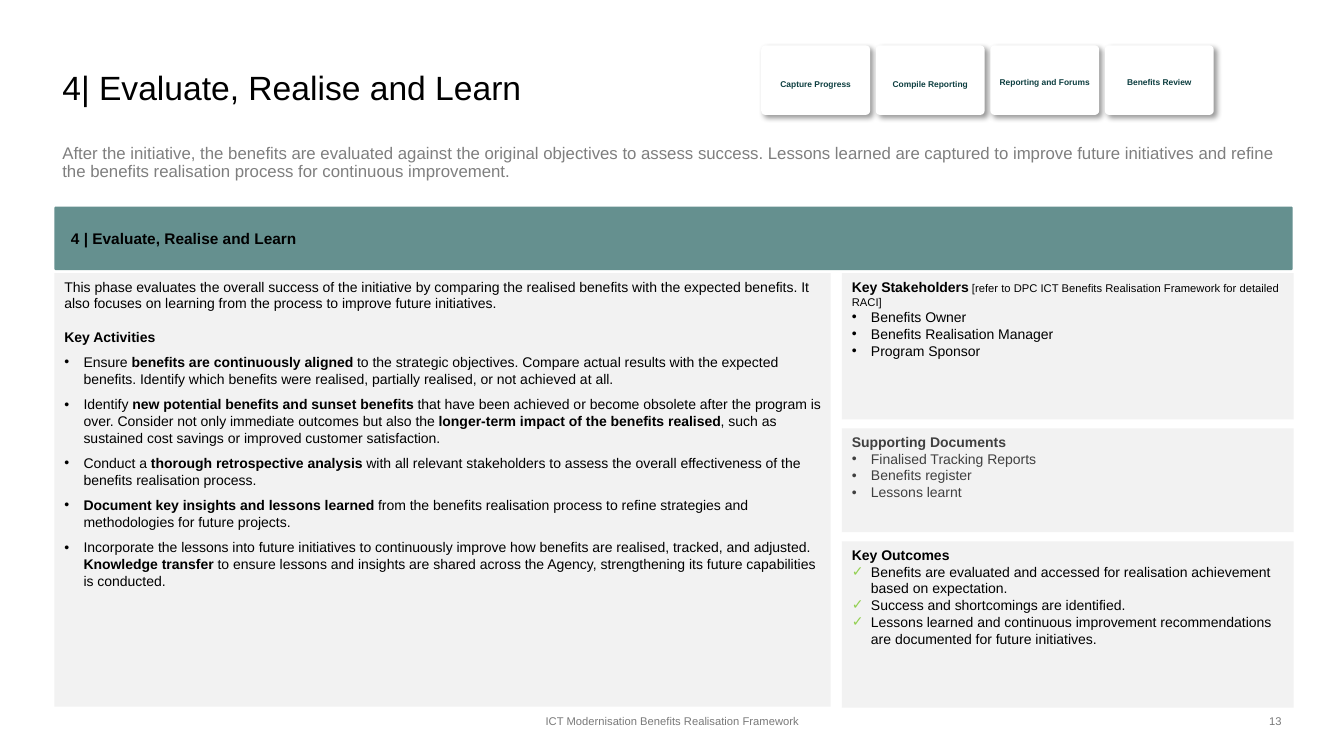
"""Build the Evaluate, Realise and Learn phase slide."""
from dataclasses import dataclass

from lxml import etree
from pptx import Presentation
from pptx.dml.color import RGBColor
from pptx.enum.shapes import MSO_SHAPE
from pptx.enum.text import MSO_ANCHOR, PP_ALIGN
from pptx.oxml.ns import qn
from pptx.util import Inches, Pt

RECT, ROUNDED = MSO_SHAPE.RECTANGLE, MSO_SHAPE.ROUNDED_RECTANGLE
TOP, MIDDLE = MSO_ANCHOR.TOP, MSO_ANCHOR.MIDDLE
LEFT, CENTER, RIGHT = PP_ALIGN.LEFT, PP_ALIGN.CENTER, PP_ALIGN.RIGHT


@dataclass(frozen=True)
class Theme:
    font: str = "Arial"
    black: str = "000000"
    white: str = "FFFFFF"
    lead: str = "7F7F7F"
    footer: str = "797979"
    step: str = "0D3E40"
    banner: str = "65908F"
    panel: str = "F2F2F2"
    muted: str = "404040"
    tick: str = "92D050"
    title_size: int = 24
    lead_size: int = 12
    banner_size: int = 11
    body_size: int = 10
    small_size: int = 8
    step_size: int = 6


theme = Theme()


def write(box, text, size=theme.body_size, color=theme.black, align=LEFT, bullet=None,
          bullet_color=None, before=0, spacing=None, note=None):
    """Append a paragraph in which ** switches bold on and off, with an optional small note."""
    frame = box.text_frame
    paragraph = frame.add_paragraph() if frame.text else frame.paragraphs[0]
    paragraph.alignment = align
    paragraph.space_before = Pt(before)
    if spacing:
        paragraph.line_spacing = spacing
    if bullet:
        properties = paragraph._p.get_or_add_pPr()
        properties.set("marL", str(Inches(0.19)))
        properties.set("indent", str(Inches(-0.19)))
        if bullet_color:
            tint = etree.SubElement(properties, qn("a:buClr"))
            etree.SubElement(tint, qn("a:srgbClr"), val=bullet_color)
        etree.SubElement(properties, qn("a:buFont"), typeface=theme.font)
        etree.SubElement(properties, qn("a:buChar"), char=bullet)
    pieces = [(part, index % 2 == 1, size) for index, part in enumerate(text.split("**"))]
    if note:
        pieces.append((note, False, theme.small_size))
    for part, bold, points in pieces:
        if part:
            run = paragraph.add_run()
            run.text = part
            run.font.name = theme.font
            run.font.size = Pt(points)
            run.font.bold = bold
            run.font.color.rgb = RGBColor.from_string(color)


def add_box(left, top, width, height, kind=None, fill=None, anchor=TOP):
    """Add a filled shape, or a plain text box when no kind is given."""
    place = [Inches(value) for value in (left, top, width, height)]
    if kind is None:
        box = slide.shapes.add_textbox(*place)
    else:
        box = slide.shapes.add_shape(kind, *place)
        box.shadow.inherit = False
        box.fill.solid()
        box.fill.fore_color.rgb = RGBColor.from_string(fill)
        box.line.fill.background()
    box.text_frame.word_wrap = True
    box.text_frame.vertical_anchor = anchor
    return box


deck = Presentation()
deck.slide_width, deck.slide_height = Inches(13.33), Inches(7.5)
slide = deck.slides.add_slide(deck.slide_layouts[6])

title = add_box(0.52, 0.48, 12.28, 0.82, anchor=MIDDLE)
write(title, "4| Evaluate, Realise and Learn", size=theme.title_size, spacing=0.9)

steps = [("Capture Progress", 0.05), ("Compile Reporting", 0.05),
         ("Reporting and Forums", 0.08), ("Benefits Review", 0.08)]
for index, (step, bottom_inset) in enumerate(steps):
    card = add_box(7.55 + index * 1.136, 0.45, 1.08, 0.69, ROUNDED, theme.white, MIDDLE)
    card.adjustments[0] = 0.06
    card.text_frame.margin_left = card.text_frame.margin_right = 0
    card.text_frame.margin_top = Inches(0.12)
    card.text_frame.margin_bottom = Inches(bottom_inset)
    effects = card._element.spPr.find(qn("a:effectLst"))
    shadow = etree.SubElement(effects, qn("a:outerShdw"), blurRad=str(Pt(4)), dist=str(Pt(3)),
                              dir="2700000", algn="tl", rotWithShape="0")
    shade = etree.SubElement(shadow, qn("a:srgbClr"), val=theme.black)
    etree.SubElement(shade, qn("a:alpha"), val="40000")
    write(card, f"**{step}**", size=theme.step_size, color=theme.step, align=CENTER)

lead = add_box(0.52, 1.39, 12.28, 0.58)
write(lead, "After the initiative, the benefits are evaluated against the original objectives to "
      "assess success. Lessons learned are captured to improve future initiatives and refine the "
      "benefits realisation process for continuous improvement.",
      size=theme.lead_size, color=theme.lead, spacing=0.9)

banner = add_box(0.54, 2.05, 12.28, 0.63, ROUNDED, theme.banner, MIDDLE)
banner.adjustments[0] = 0.02
banner.text_frame.margin_left = Inches(0.16)
write(banner, "**4 | Evaluate, Realise and Learn**", size=theme.banner_size)

phase = add_box(0.54, 2.71, 7.7, 4.3, RECT, theme.panel)
write(phase, "This phase evaluates the overall success of the initiative by comparing the realised "
      "benefits with the expected benefits. It also focuses on learning from the process to "
      "improve future initiatives.")
write(phase, "**Key Activities**", before=12)
activities = [
    "Ensure **benefits are continuously aligned **to the strategic objectives. Compare actual "
    "results with the expected benefits. Identify which benefits were realised, partially "
    "realised, or not achieved at all.",
    "Identify **new potential benefits and sunset benefits **that have been achieved or become "
    "obsolete after the program is over. Consider not only immediate outcomes but also the "
    "**longer-term impact of the benefits realised**, such as sustained cost savings or improved "
    "customer satisfaction.",
    "Conduct a **thorough retrospective analysis **with all relevant stakeholders to assess the "
    "overall effectiveness of the benefits realisation process.",
    "**Document key insights and lessons learned **from the benefits realisation process to "
    "refine strategies and methodologies for future projects.",
    "Incorporate the lessons into future initiatives to continuously improve how benefits are "
    "realised, tracked, and adjusted. **Knowledge transfer **to ensure lessons and insights are "
    "shared across the Agency, strengthening its future capabilities is conducted.",
]
for activity in activities:
    write(phase, activity, bullet="•", before=6)

side_panels = [
    (2.71, 1.45, "Key Stakeholders", theme.black, "•", None,
     " [refer to DPC ICT Benefits Realisation Framework for detailed RACI]",
     ["Benefits Owner", "Benefits Realisation Manager", "Program Sponsor"]),
    (4.25, 1.03, "Supporting Documents", theme.muted, "•", None, None,
     ["Finalised Tracking Reports", "Benefits register", "Lessons learnt"]),
    (5.37, 1.65, "Key Outcomes", theme.black, "✓", theme.tick, None,
     ["Benefits are evaluated and accessed for realisation achievement based on expectation.",
      "Success and shortcomings are identified.",
      "Lessons learned and continuous improvement recommendations are documented for future "
      "initiatives."]),
]
for top, height, heading, color, mark, mark_color, note, items in side_panels:
    panel = add_box(8.35, top, 4.48, height, RECT, theme.panel)
    write(panel, f"**{heading}**", color=color, note=note)
    for item in items:
        write(panel, item, color=color, bullet=mark, bullet_color=mark_color)

footer = add_box(4.42, 6.95, 4.5, 0.4, anchor=MIDDLE)
write(footer, "ICT Modernisation Benefits Realisation Framework", size=theme.small_size,
      color=theme.footer, align=CENTER)
page_number = add_box(9.81, 6.95, 3, 0.4, anchor=MIDDLE)
write(page_number, "13", size=theme.small_size, color=theme.footer, align=RIGHT)

deck.save("out.pptx")
